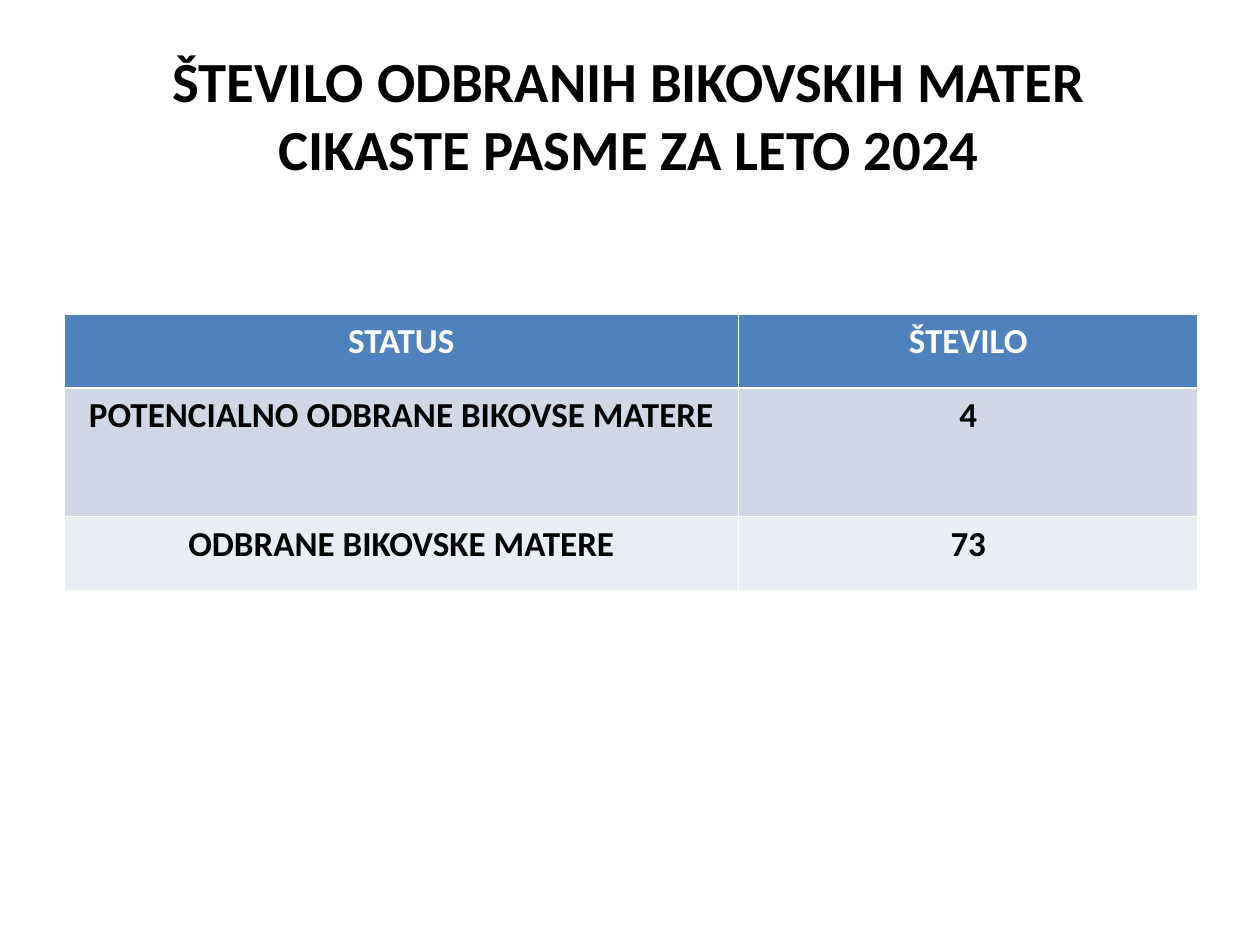
from dataclasses import dataclass

from pptx import Presentation
from pptx.dml.color import RGBColor
from pptx.enum.text import MSO_ANCHOR, PP_ALIGN
from pptx.util import Inches, Pt


@dataclass(frozen=True)
class Theme:
    font: str = "Calibri"
    title_size: float = 32.4
    cell_size: float = 20
    dark: str = "000000"
    light: str = "FFFFFF"
    header: str = "4F81BD"
    bands: tuple = ("D0D8E8", "E9EDF4")


THEME = Theme()
ROWS = (
    ("STATUS", "ŠTEVILO"),
    ("POTENCIALNO ODBRANE BIKOVSE MATERE", "4"),
    ("ODBRANE BIKOVSKE MATERE", "73"),
)
COL_WIDTHS = (5.35, 3.65)
ROW_HEIGHTS = (0.59, 1.02, 0.59)


def write_text(tf, text, size, color=THEME.dark, bold=True, align=PP_ALIGN.CENTER):
    p = tf.paragraphs[0]
    p.alignment = align
    r = p.add_run()
    r.text = text
    r.font.name = THEME.font
    r.font.size = Pt(size)
    r.font.bold = bold
    r.font.color.rgb = RGBColor.from_string(color)


def add_title(s, left, top, width, height):
    sp = s.shapes.add_textbox(left, top, width, height)
    tf = sp.text_frame
    tf.word_wrap = True
    tf.vertical_anchor = MSO_ANCHOR.MIDDLE
    write_text(tf, "ŠTEVILO ODBRANIH BIKOVSKIH MATER CIKASTE PASME ZA LETO 2024",
               THEME.title_size)


def add_status_table(s, left, top, width, height):
    table = s.shapes.add_table(len(ROWS), len(COL_WIDTHS), left, top, width, height).table
    for column, share in zip(table.columns, COL_WIDTHS):
        column.width = int(width * share / sum(COL_WIDTHS))
    for row, share in zip(table.rows, ROW_HEIGHTS):
        row.height = int(height * share / sum(ROW_HEIGHTS))
    for i, values in enumerate(ROWS):
        fill = THEME.bands[(i - 1) % 2] if i else THEME.header
        color = THEME.dark if i else THEME.light
        for j, value in enumerate(values):
            cell = table.cell(i, j)
            cell.fill.solid()
            cell.fill.fore_color.rgb = RGBColor.from_string(fill)
            write_text(cell.text_frame, value, THEME.cell_size, color)


def main():
    prs = Presentation()
    prs.slide_width, prs.slide_height = Inches(10), Inches(7.5)
    s = prs.slides.add_slide(prs.slide_layouts[6])
    add_title(s, Inches(0.49), Inches(0.28), Inches(9), Inches(1.25))
    add_status_table(s, Inches(0.51), Inches(2.49), Inches(9), Inches(2.2))
    prs.save("out.pptx")


if __name__ == "__main__":
    main()
